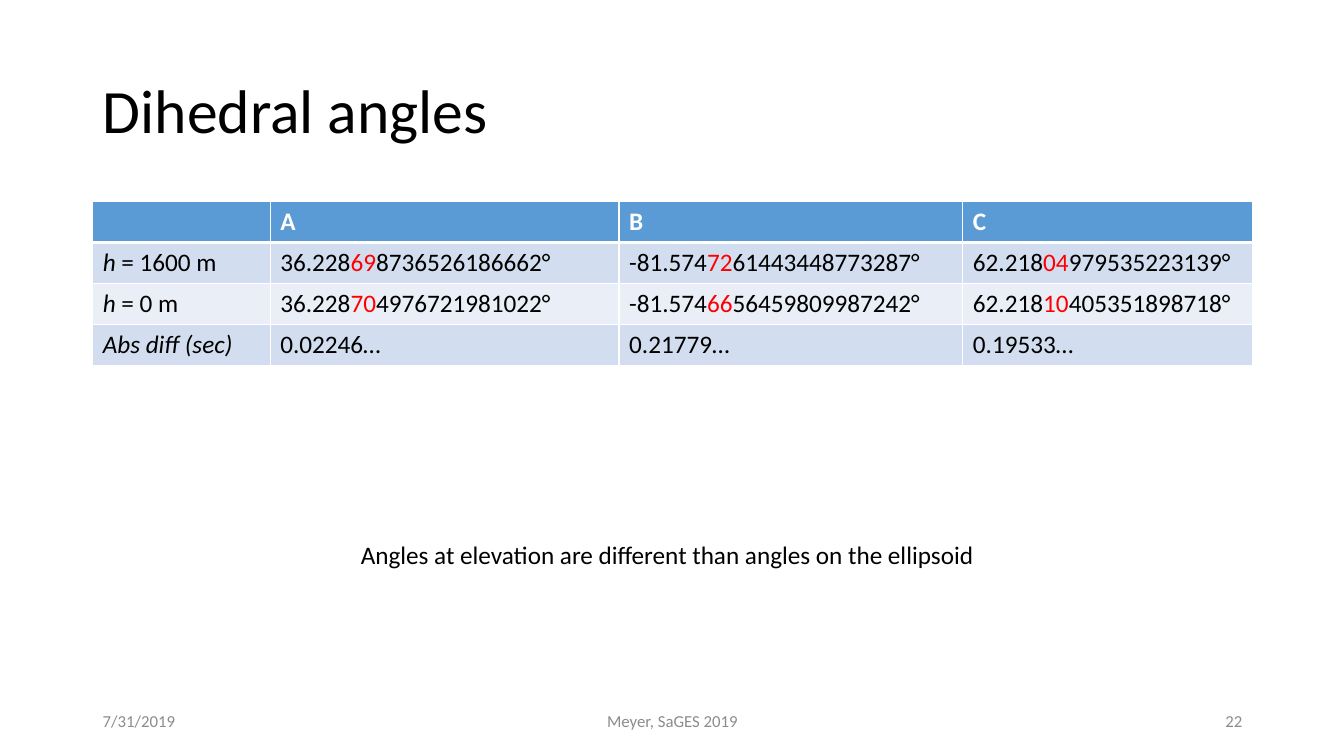
"""Build the slide on dihedral angles."""
from lxml.etree import SubElement
from pptx import Presentation
from pptx.dml.color import RGBColor
from pptx.enum.text import MSO_ANCHOR, PP_ALIGN
from pptx.oxml.ns import qn
from pptx.util import Inches, Pt

BLACK = RGBColor(0x00, 0x00, 0x00)
WHITE = RGBColor(0xFF, 0xFF, 0xFF)
RED = RGBColor(0xFF, 0x00, 0x00)
GRAY = RGBColor(0x8C, 0x8C, 0x8C)
HEADER_BLUE = RGBColor(0x5B, 0x9B, 0xD5)
BAND_DARK = RGBColor(0xD2, 0xDE, 0xEF)
BAND_LIGHT = RGBColor(0xEA, 0xEF, 0xF7)
FONT = "Calibri"

PLAIN, ITALIC, CHANGED = "plain", "italic", "changed"
COLUMN_WIDTHS = [1.76, 3.46, 3.41, 2.87]


def angle(start, changed, end):
    """Return the runs of an angle whose differing digits stand out."""
    return [(start, PLAIN), (changed, CHANGED), (end, PLAIN)]


ROWS = [
    [[], [("A", PLAIN)], [("B", PLAIN)], [("C", PLAIN)]],
    [
        [("h", ITALIC), (" = 1600 m", PLAIN)],
        angle("36.228", "69", "8736526186662°"),
        angle("-81.574", "72", "61443448773287°"),
        angle("62.218", "04", "979535223139°"),
    ],
    [
        [("h", ITALIC), (" = 0 m", PLAIN)],
        angle("36.228", "70", "4976721981022°"),
        angle("-81.574", "66", "56459809987242°"),
        angle("62.218", "10", "405351898718°"),
    ],
    [
        [("Abs diff (sec)", ITALIC)],
        [("0.02246…", PLAIN)],
        [("0.21779…", PLAIN)],
        [("0.19533…", PLAIN)],
    ],
]


def set_font(paragraph, size, color, bold=False):
    """Give a paragraph its font."""
    font = paragraph.font
    font.name, font.size, font.bold = FONT, Pt(size), bold
    font.color.rgb = color


def set_title(slide, text):
    """Place and format the title placeholder."""
    title = slide.shapes.title
    title.left, title.top = Inches(0.92), Inches(0.4)
    title.width, title.height = Inches(11.5), Inches(1.45)
    frame = title.text_frame
    frame.text = text
    frame.vertical_anchor = MSO_ANCHOR.MIDDLE
    paragraph = frame.paragraphs[0]
    paragraph.alignment = PP_ALIGN.LEFT
    paragraph.line_spacing = 0.9
    set_font(paragraph, 44, BLACK)


def add_text(slide, text, left, top, width, size, color,
             alignment=PP_ALIGN.LEFT, anchor=MSO_ANCHOR.MIDDLE, wrap=True):
    """Add a one-line text box."""
    box = slide.shapes.add_textbox(
        Inches(left), Inches(top), Inches(width), Inches(0.4))
    frame = box.text_frame
    frame.word_wrap = wrap
    frame.vertical_anchor = anchor
    frame.text = text
    paragraph = frame.paragraphs[0]
    paragraph.alignment = alignment
    set_font(paragraph, size, color)


def set_borders(cell, top, bottom):
    """Draw white cell borders, with top and bottom widths in points."""
    properties = cell._tc.get_or_add_tcPr()
    for side, width in (("L", 1), ("R", 1), ("T", top), ("B", bottom)):
        line = SubElement(properties, qn(f"a:ln{side}"), w=str(Pt(width)))
        fill = SubElement(line, qn("a:solidFill"))
        SubElement(fill, qn("a:srgbClr"), val=str(WHITE))


def fill_cell(cell, runs, row_index):
    """Write and format one table cell."""
    is_header = row_index == 0
    set_borders(cell, 3 if row_index == 1 else 1, 3 if is_header else 1)
    band = BAND_DARK if row_index % 2 else BAND_LIGHT
    cell.fill.solid()
    cell.fill.fore_color.rgb = HEADER_BLUE if is_header else band
    paragraph = cell.text_frame.paragraphs[0]
    set_font(paragraph, 18, WHITE if is_header else BLACK, is_header)
    for text, style in runs:
        run = paragraph.add_run()
        run.text = text
        if style == ITALIC:
            run.font.italic = True
        elif style == CHANGED:
            run.font.color.rgb = RED


def add_angle_table(slide):
    """Add the table of angles at two heights."""
    table = slide.shapes.add_table(
        len(ROWS), len(COLUMN_WIDTHS),
        Inches(0.92), Inches(2), Inches(11.5), Inches(1.62)).table
    for column, width in zip(table.columns, COLUMN_WIDTHS):
        column.width = Inches(width)
    for row_index, row in enumerate(ROWS):
        for column_index, runs in enumerate(row):
            fill_cell(table.cell(row_index, column_index), runs, row_index)


def main():
    """Build and save the presentation."""
    presentation = Presentation()
    presentation.slide_width = Inches(13.33)
    presentation.slide_height = Inches(7.5)
    slide = presentation.slides.add_slide(presentation.slide_layouts[5])
    set_title(slide, "Dihedral angles")
    add_angle_table(slide)
    add_text(slide, "7/31/2019", 0.92, 6.95, 3, 12, GRAY)
    add_text(slide, "Meyer, SaGES 2019", 4.42, 6.95, 4.5, 12, GRAY, PP_ALIGN.CENTER)
    add_text(slide, "22", 9.42, 6.95, 3, 12, GRAY, PP_ALIGN.RIGHT)
    add_text(slide, "Angles at elevation are different than angles on the ellipsoid",
             3.48, 5.3, 6.36, 18, BLACK, anchor=MSO_ANCHOR.TOP, wrap=False)
    presentation.save("out.pptx")


if __name__ == "__main__":
    main()
